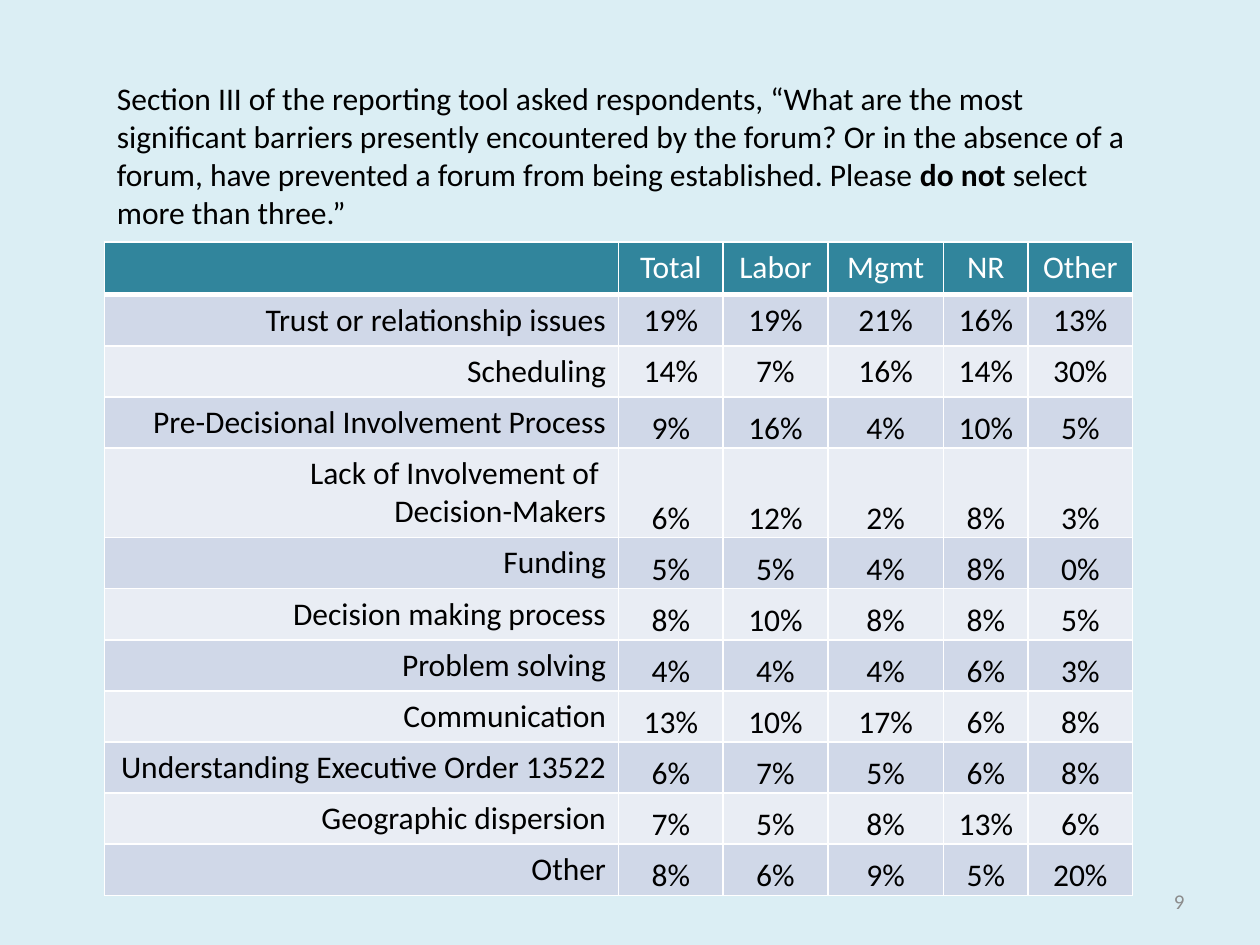
from lxml.etree import SubElement
from pptx import Presentation
from pptx.dml.color import RGBColor
from pptx.enum.text import MSO_ANCHOR, PP_ALIGN
from pptx.oxml.ns import qn
from pptx.util import Inches, Pt

COLORS = {
    "background": "DBEEF4",
    "header": "31859C",
    "odd_row": "D0D8E8",
    "even_row": "E9EDF4",
    "border": "FFFFFF",
    "header_text": "FFFFFF",
    "text": "000000",
    "page_number": "8C8C8C",
}
HEADINGS = ["", "Total", "Labor", "Mgmt", "NR", "Other"]
BARRIERS = [
    ("Trust or relationship issues", 19, 19, 21, 16, 13),
    ("Scheduling", 14, 7, 16, 14, 30),
    ("Pre-Decisional Involvement Process", 9, 16, 4, 10, 5),
    ("Lack of Involvement of \nDecision-Makers", 6, 12, 2, 8, 3),
    ("Funding", 5, 5, 4, 8, 0),
    ("Decision making process", 8, 10, 8, 8, 5),
    ("Problem solving", 4, 4, 4, 6, 3),
    ("Communication", 13, 10, 17, 6, 8),
    ("Understanding Executive Order 13522", 6, 7, 5, 6, 8),
    ("Geographic dispersion", 7, 5, 8, 13, 6),
    ("Other", 8, 6, 9, 5, 20),
]
COLUMN_WIDTHS = [4.08, 0.83, 0.83, 0.92, 0.67, 0.83]
BOTTOM_CELL = {
    "vertical_anchor": MSO_ANCHOR.BOTTOM,
    "margin_left": Inches(0.01),
    "margin_top": Inches(0.01),
    "margin_right": Inches(0.01),
    "margin_bottom": Inches(0),
}


def add_run(paragraph, text, color, size=18, bold=False):
    run = paragraph.add_run()
    run.text = text
    for name, value in {"name": "Calibri", "size": Pt(size), "bold": bold}.items():
        setattr(run.font, name, value)
    run.font.color.rgb = RGBColor.from_string(COLORS[color])


def add_borders(cell, bottom_width):
    properties = cell._tc.get_or_add_tcPr()
    for side, width in {"L": 1, "R": 1, "T": 1, "B": bottom_width}.items():
        line = SubElement(properties, qn(f"a:ln{side}"), w=str(Pt(width)))
        fill = SubElement(line, qn("a:solidFill"))
        SubElement(fill, qn("a:srgbClr"), val=COLORS["border"])


presentation = Presentation()
presentation.slide_width = Inches(10)
presentation.slide_height = Inches(7.5)
slide = presentation.slides.add_slide(presentation.slide_layouts[6])
slide.background.fill.solid()
slide.background.fill.fore_color.rgb = RGBColor.from_string(COLORS["background"])

rows = [HEADINGS] + [
    [label] + [f"{value}%" for value in values] for label, *values in BARRIERS
]
table = slide.shapes.add_table(
    len(rows), len(HEADINGS), Inches(0.83), Inches(1.92), Inches(8.17), Inches(5.12)
).table
for column, width in zip(table.columns, COLUMN_WIDTHS):
    column.width = Inches(width)

for row_index, texts in enumerate(rows):
    is_header = row_index == 0
    row_fill = "header" if is_header else ("even_row", "odd_row")[row_index % 2]
    text_color = "header_text" if is_header else "text"
    if is_header:
        row_height = 0.42
    else:
        row_height = 0.7 if "\n" in texts[0] else 0.4
    table.rows[row_index].height = Inches(row_height)
    for column_index, text in enumerate(texts):
        cell = table.cell(row_index, column_index)
        add_borders(cell, 3 if is_header else 1)
        cell.fill.solid()
        cell.fill.fore_color.rgb = RGBColor.from_string(COLORS[row_fill])
        if row_index > 2 and column_index > 0:
            for name, value in BOTTOM_CELL.items():
                setattr(cell, name, value)
        if not text:
            continue
        for line_index, line_text in enumerate(text.split("\n")):
            frame = cell.text_frame
            paragraph = frame.add_paragraph() if line_index else frame.paragraphs[0]
            is_label = column_index == 0
            paragraph.alignment = PP_ALIGN.RIGHT if is_label else PP_ALIGN.CENTER
            add_run(paragraph, line_text, text_color)

question = slide.shapes.add_textbox(Inches(0.83), Inches(0.58), Inches(8.33), Inches(1.31))
question.text_frame.word_wrap = True
paragraph = question.text_frame.paragraphs[0]
add_run(
    paragraph,
    "Section III of the reporting tool asked respondents, “What are the most "
    "significant barriers presently encountered by the forum? Or in the absence of a "
    "forum, have prevented a forum from being established. Please ",
    "text",
)
add_run(paragraph, "do not ", "text", bold=True)
add_run(paragraph, "select more than three.”", "text")

page_number = slide.shapes.add_textbox(Inches(7.17), Inches(6.95), Inches(2.33), Inches(0.4))
page_format = {"word_wrap": True, "vertical_anchor": MSO_ANCHOR.MIDDLE}
for name, value in page_format.items():
    setattr(page_number.text_frame, name, value)
paragraph = page_number.text_frame.paragraphs[0]
paragraph.alignment = PP_ALIGN.RIGHT
add_run(paragraph, "9", "page_number", size=12)

presentation.save("out.pptx")
